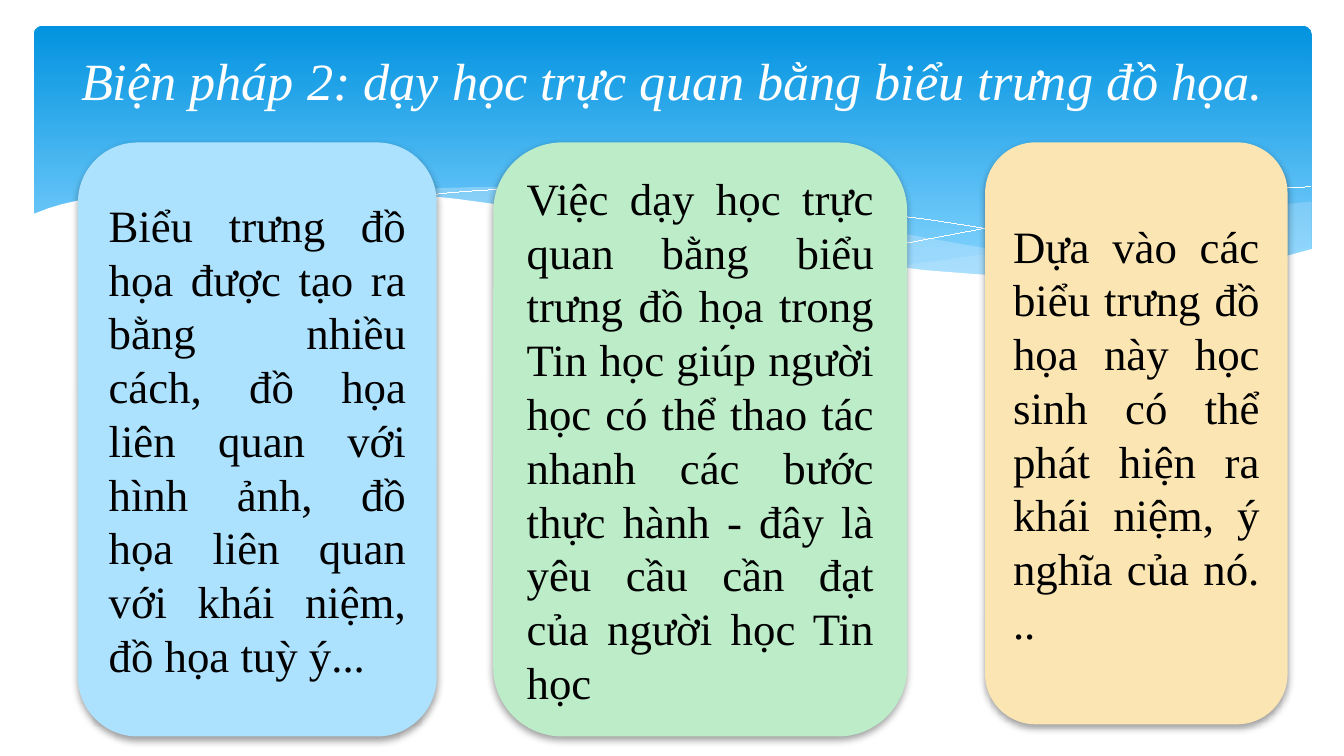
"""Build a slide with a blue wave header, a title and three text cards."""
from dataclasses import dataclass

from lxml import etree
from pptx import Presentation
from pptx.dml.color import RGBColor
from pptx.enum.shapes import MSO_SHAPE
from pptx.enum.text import MSO_ANCHOR, PP_ALIGN
from pptx.oxml.ns import qn
from pptx.util import Inches, Pt

ROUNDED = MSO_SHAPE.ROUNDED_RECTANGLE
MIDDLE = MSO_ANCHOR.MIDDLE
CENTER = PP_ALIGN.CENTER
JUSTIFY = PP_ALIGN.JUSTIFY


@dataclass(frozen=True)
class Theme:
    font: str = "Times New Roman"
    title_size: Pt = Pt(28)
    body_size: Pt = Pt(24)
    white: RGBColor = RGBColor(0xFF, 0xFF, 0xFF)
    black: RGBColor = RGBColor(0, 0, 0)
    header_top: RGBColor = RGBColor(0x02, 0x93, 0xE0)
    header_bottom: RGBColor = RGBColor(0x83, 0xD3, 0xFE)
    wave: RGBColor = RGBColor(0xC6, 0xE7, 0xFC)
    blue_card: RGBColor = RGBColor(0xAD, 0xE2, 0xFE)
    green_card: RGBColor = RGBColor(0xBD, 0xEC, 0xC9)
    yellow_card: RGBColor = RGBColor(0xFB, 0xE6, 0xB3)


def write_text(shape, text, size, color, alignment):
    frame = shape.text_frame
    frame.word_wrap = True
    frame.vertical_anchor = MIDDLE
    paragraph = frame.paragraphs[0]
    paragraph.text = text
    paragraph.alignment = alignment
    paragraph.font.name = theme.font
    paragraph.font.size = size
    paragraph.font.color.rgb = color
    return paragraph


def add_curve(points, closed):
    builder = slide.shapes.build_freeform(*points[0], scale=Inches(0.01))
    builder.add_line_segments(points[1:], close=closed)
    shape = builder.convert_to_shape()
    shape.shadow.inherit = False
    return shape


theme = Theme()
presentation = Presentation()
presentation.slide_width = Inches(10)
presentation.slide_height = Inches(10 * 9 / 16)
slide = presentation.slides.add_slide(presentation.slide_layouts[6])

header = slide.shapes.add_shape(ROUNDED, Inches(0.25), Inches(0.19), Inches(9.51), Inches(2.02))
header.adjustments[0] = 0.034
header.shadow.inherit = False
header.line.fill.background()
header.fill.gradient()
header.fill.gradient_angle = 270
for stop, color, position in zip(
    header.fill.gradient_stops, (theme.header_top, theme.header_bottom), (0, 0.9)
):
    stop.color.rgb = color
    stop.position = position

right_wave = [
    (975, 150), (948, 153), (921, 157), (891, 162), (861, 167), (805, 177), (753, 186),
    (706, 193), (661, 199), (691, 202), (719, 204), (745, 206), (781, 208), (814, 208),
    (844, 207), (872, 206), (897, 203), (921, 199), (942, 194), (963, 189), (976, 185),
    (976, 150),
]
long_wave = [
    (893, 204), (866, 202), (837, 199), (807, 195), (775, 191), (741, 186), (706, 180),
    (668, 173), (629, 166), (598, 161), (569, 156), (541, 152), (514, 148), (489, 146),
    (465, 143), (442, 142), (420, 140), (399, 139), (361, 139), (328, 140), (299, 142),
    (286, 144), (323, 147), (362, 152), (404, 158), (449, 166), (491, 174), (530, 180),
    (566, 186), (601, 191), (634, 196), (665, 200), (695, 203), (722, 205), (748, 207),
    (785, 208), (818, 209), (848, 208), (876, 206),
]
long_line = [
    (309, 147), (328, 144), (353, 142), (387, 140), (433, 140), (469, 141), (510, 144),
    (556, 147), (608, 153), (636, 156), (665, 160), (695, 164), (727, 169), (760, 175),
    (795, 181), (831, 188), (869, 195), (907, 204),
]
right_line = [
    (613, 192), (653, 185), (695, 177), (748, 167), (806, 158), (866, 149), (895, 145),
    (924, 142), (951, 140), (975, 139),
]
white_base = [
    (977, 185), (959, 190), (940, 194), (920, 199), (899, 202), (875, 205), (850, 206),
    (823, 207), (793, 207), (761, 206), (726, 204), (688, 201), (648, 196), (603, 191),
    (555, 184), (503, 175), (447, 165), (391, 155), (340, 148), (292, 143), (250, 140),
    (211, 138), (177, 138), (146, 139), (119, 140), (95, 143), (76, 146), (59, 149),
    (46, 152), (36, 155), (23, 160), (23, 247), (977, 247),
]

for points, opacity in ((right_wave, 29), (long_wave, 40)):
    wave = add_curve(points, True)
    wave.line.fill.background()
    wave.fill.solid()
    wave.fill.fore_color.rgb = theme.wave
    fill_color = wave._element.spPr.find(qn("a:solidFill"))[0]
    etree.SubElement(fill_color, qn("a:alpha"), val=str(opacity * 1000))

for points in (long_line, right_line):
    curve = add_curve(points, False)
    curve.fill.background()
    curve.line.color.rgb = theme.white
    curve.line.width = Pt(0.01)

base = add_curve(white_base, True)
base.line.fill.background()
base.fill.solid()
base.fill.fore_color.rgb = theme.white

title = slide.shapes.add_textbox(Inches(0.25), Inches(0.28), Inches(9.5), Inches(0.62))
title_paragraph = write_text(
    title, "Biện pháp 2: dạy học trực quan bằng biểu trưng đồ họa.",
    theme.title_size, theme.white, CENTER,
)
title_paragraph.font.italic = True

cards = [
    (0.58, 2.67, 4.42, theme.blue_card,
     "Biểu trưng đồ họa được tạo ra bằng nhiều cách, đồ họa liên quan với hình ảnh, "
     "đồ họa liên quan với khái niệm, đồ họa tuỳ ý..."),
    (3.67, 3.08, 4.42, theme.green_card,
     "Việc dạy học trực quan bằng biểu trưng đồ họa trong Tin học giúp người học có thể "
     "thao tác nhanh các bước thực hành - đây là yêu cầu cần đạt của người học Tin học"),
    (7.33, 2.25, 4.33, theme.yellow_card,
     "Dựa vào các biểu trưng đồ họa này học sinh có thể phát hiện ra khái niệm, "
     "ý nghĩa của nó. .."),
]
for left, width, height, color, text in cards:
    card = slide.shapes.add_shape(ROUNDED, Inches(left), Inches(1.06), Inches(width), Inches(height))
    card.fill.solid()
    card.fill.fore_color.rgb = color
    card.line.fill.background()
    card.shadow.inherit = False
    effects = card._element.spPr.find(qn("a:effectLst"))
    shadow = etree.SubElement(
        effects, qn("a:outerShdw"), blurRad=str(Pt(4)), dist=str(Pt(2)), dir="5400000", rotWithShape="0"
    )
    shadow_color = etree.SubElement(shadow, qn("a:srgbClr"), val=str(theme.black))
    etree.SubElement(shadow_color, qn("a:alpha"), val="38000")
    write_text(card, text, theme.body_size, theme.black, JUSTIFY)

presentation.save("out.pptx")
